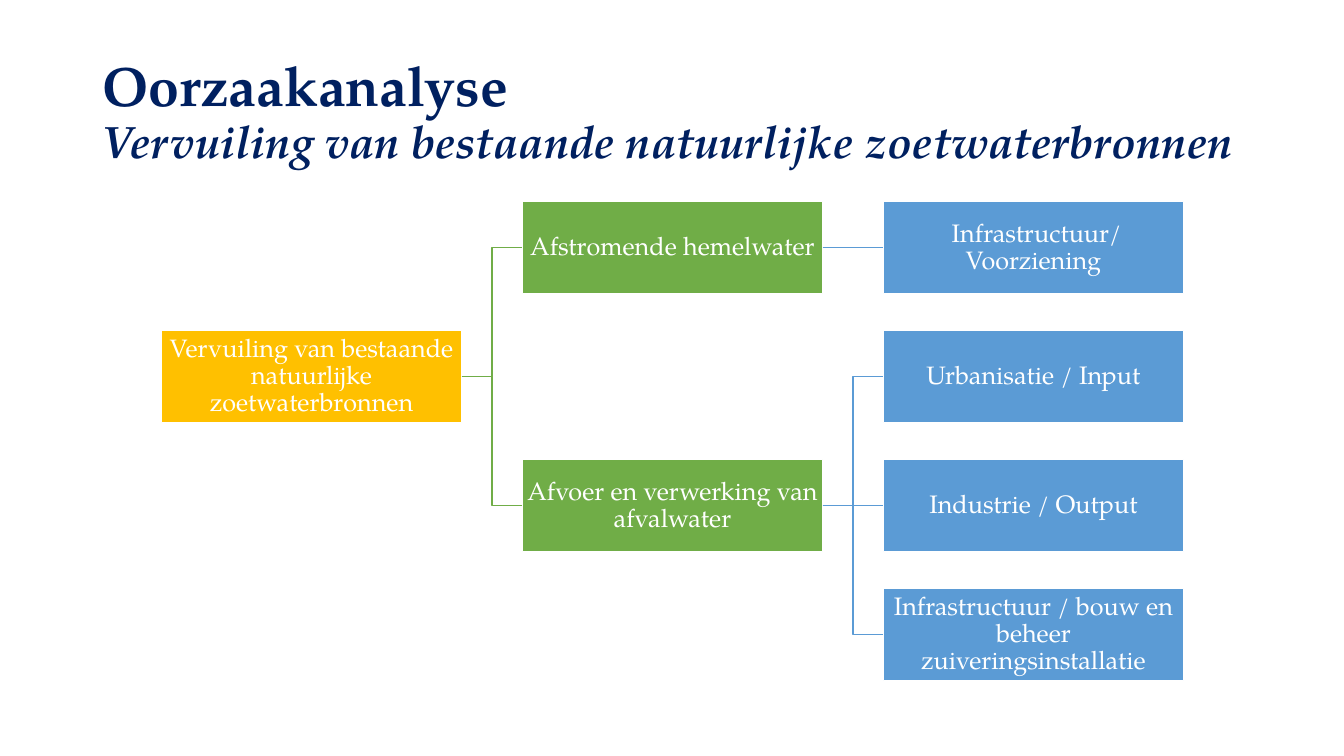
from pptx import Presentation
from pptx.dml.color import RGBColor
from pptx.enum.shapes import MSO_CONNECTOR as CONN, MSO_SHAPE as SHAPE
from pptx.enum.text import MSO_ANCHOR as ANCHOR, PP_ALIGN as ALIGN
from pptx.oxml.ns import qn
from pptx.util import Inches, Pt

FONT = "TeX Gyre Pagella"
NAVY = RGBColor(0x00, 0x20, 0x60)
AMBER = RGBColor(0xFF, 0xC0, 0x00)
GREEN = RGBColor(0x70, 0xAD, 0x47)
BLUE = RGBColor(0x5B, 0x9B, 0xD5)
WHITE = RGBColor(0xFF, 0xFF, 0xFF)

TITLE = "Oorzaakanalyse"
SUBTITLE = "Vervuiling van bestaande natuurlijke zoetwaterbronnen"
LEVEL_COLORS = [AMBER, GREEN, BLUE]
# key: (level, row, parent, text)
NODES = {
    "problem": (0, 1, None, "Vervuiling van bestaande natuurlijke zoetwaterbronnen"),
    "rain": (1, 0, "problem", "Afstromende hemelwater"),
    "waste": (1, 2, "problem", "Afvoer en verwerking van afvalwater"),
    "provision": (2, 0, "rain", " Infrastructuur/ Voorziening"),
    "input": (2, 1, "waste", "Urbanisatie / Input"),
    "output": (2, 2, "waste", "Industrie / Output"),
    "treatment": (2, 3, "waste", "Infrastructuur / bouw en beheer zuiveringsinstallatie"),
}
LEFT, TOP = 1.6, 2.0
BOX_W, BOX_H = 2.98, 0.91
COL_STEP, ROW_STEP = 3.58, 1.28


def add_run(p, text, size, color, bold=False, italic=False):
    r = p.add_run()
    r.text = text
    f = r.font
    f.name, f.size, f.bold, f.italic = FONT, Pt(size), bold, italic
    f.color.rgb = color


def add_title(slide):
    tf = slide.shapes.add_textbox(Inches(0.92), Inches(0.4), Inches(11.5), Inches(1.45)).text_frame
    tf.word_wrap = True
    tf.vertical_anchor = ANCHOR.MIDDLE
    p = tf.paragraphs[0]
    p.line_spacing = 0.9
    add_run(p, TITLE, 39.6, NAVY, bold=True)
    p.add_line_break()
    add_run(p, SUBTITLE, 32.4, NAVY, bold=True, italic=True)


def add_box(slide, level, row, text):
    sp = slide.shapes.add_shape(
        SHAPE.RECTANGLE, Inches(LEFT + level * COL_STEP), Inches(TOP + row * ROW_STEP),
        Inches(BOX_W), Inches(BOX_H))
    sp.shadow.inherit = False
    sp.fill.solid()
    sp.fill.fore_color.rgb = LEVEL_COLORS[level]
    sp.line.color.rgb = WHITE
    sp.line.width = Pt(1)
    tf = sp.text_frame
    tf.word_wrap = True
    tf.vertical_anchor = ANCHOR.MIDDLE
    tf.margin_left = tf.margin_right = tf.margin_top = tf.margin_bottom = Inches(0.01)
    p = tf.paragraphs[0]
    p.alignment = ALIGN.CENTER
    p.line_spacing = 0.9
    add_run(p, text, 18, WHITE)
    return sp


def add_branch(slide, parent, child, color):
    kind = CONN.STRAIGHT if parent.top == child.top else CONN.ELBOW
    line = slide.shapes.add_connector(kind, 0, 0, 0, 0)
    line.begin_connect(parent, 3)
    line.end_connect(child, 1)
    line.line.color.rgb = color
    line.line.width = Pt(1)
    sp_pr = line._element.spPr
    sp_pr.append(sp_pr.makeelement(qn("a:effectLst"), {}))


def main():
    prs = Presentation()
    prs.slide_width, prs.slide_height = Inches(13.33), Inches(7.5)
    slide = prs.slides.add_slide(prs.slide_layouts[6])
    add_title(slide)
    boxes = {key: add_box(slide, level, row, text)
             for key, (level, row, _, text) in NODES.items()}
    for key, (level, _, parent, _) in NODES.items():
        if parent:
            add_branch(slide, boxes[parent], boxes[key], LEVEL_COLORS[level])
    prs.save("out.pptx")


if __name__ == "__main__":
    main()
